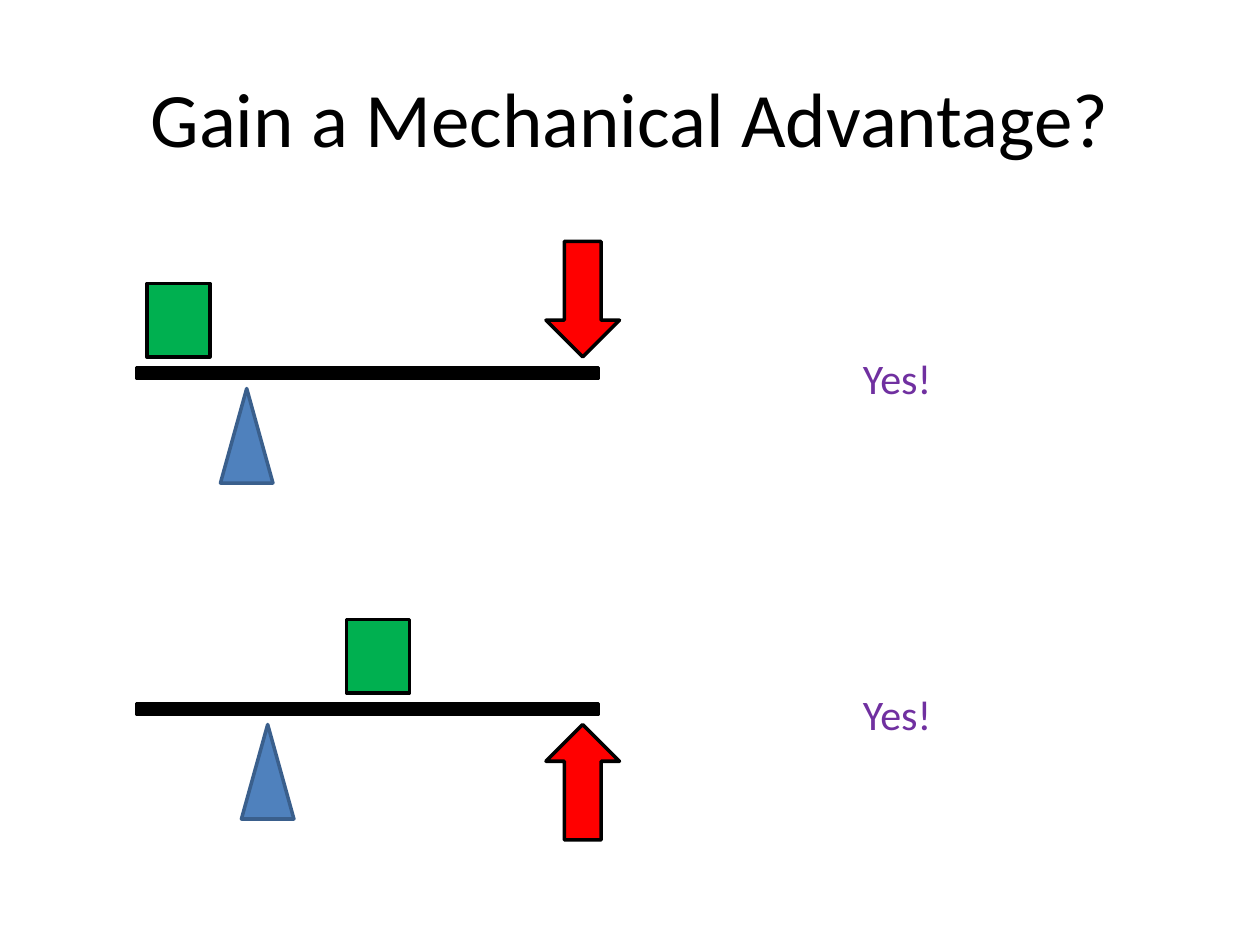
"""Builds a slide comparing the mechanical advantage of two levers."""
from pptx import Presentation
from pptx.dml.color import RGBColor
from pptx.enum.shapes import MSO_SHAPE
from pptx.enum.text import MSO_ANCHOR, MSO_AUTO_SIZE, PP_ALIGN
from pptx.util import Pt

BAR = MSO_SHAPE.RECTANGLE
TRIANGLE = MSO_SHAPE.ISOSCELES_TRIANGLE
ARROW = MSO_SHAPE.DOWN_ARROW
LEFT, CENTER = PP_ALIGN.LEFT, PP_ALIGN.CENTER
MIDDLE = MSO_ANCHOR.MIDDLE
FIT_SHAPE = MSO_AUTO_SIZE.SHAPE_TO_FIT_TEXT

COLORS = {
    "black": "000000",
    "fulcrum": "4F81BD",
    "fulcrum_edge": "3A5F8C",
    "effort": "FF0000",
    "load": "00B050",
    "answer": "7030A0",
}
LEVERS = [
    {"top": 210, "fulcrum_left": 126, "load_left": 84, "effort_up": False},
    {"top": 402, "fulcrum_left": 138, "load_left": 198, "effort_up": True},
]


def color(name):
    """Return the named colour."""
    return RGBColor.from_string(COLORS[name])


def write(frame, text, size, ink="black", align=LEFT, font="Calibri"):
    """Write one formatted paragraph into a text frame."""
    para = frame.paragraphs[0]
    para.alignment = align
    span = para.add_run()
    span.text = text
    span.font.name = font
    span.font.size = Pt(size)
    span.font.color.rgb = color(ink)


class LeverPage:
    """Holds the style and the current slide."""

    line_width = 2
    title_size = 44
    answer_size = 24
    gap = 6
    bar_height = 6

    def __init__(self, deck):
        """Add a title-only slide to the deck."""
        self.page = deck.slides.add_slide(deck.slide_layouts[5])

    def title(self, text, left, top, width, height):
        """Place and fill the title placeholder."""
        box = self.page.shapes.title
        box.left, box.top = Pt(left), Pt(top)
        box.width, box.height = Pt(width), Pt(height)
        box.text_frame.vertical_anchor = MIDDLE
        write(box.text_frame, text, self.title_size, align=CENTER)

    def shape(self, kind, left, top, width, height, fill, edge="black"):
        """Add a filled and outlined preset shape."""
        shape = self.page.shapes.add_shape(
            kind, Pt(left), Pt(top), Pt(width), Pt(height))
        shape.shadow.inherit = False
        shape.fill.solid()
        shape.fill.fore_color.rgb = color(fill)
        shape.line.color.rgb = color(edge)
        shape.line.width = Pt(self.line_width)
        return shape

    def answer(self, text, left, top, width, height):
        """Add an answer beside a lever."""
        box = self.page.shapes.add_textbox(
            Pt(left), Pt(top), Pt(width), Pt(height))
        box.text_frame.word_wrap = False
        box.text_frame.auto_size = FIT_SHAPE
        write(box.text_frame, text, self.answer_size, ink="answer")

    def lever(self, top, fulcrum_left, load_left, effort_up):
        """Draw a lever with its fulcrum, effort, load and answer."""
        above = top - self.gap
        below = top + self.bar_height + self.gap
        effort_height, load_height = 66, 42
        self.shape(BAR, 78, top, 264, self.bar_height, "black")
        self.shape(TRIANGLE, fulcrum_left, below, 30, 54,
                   "fulcrum", "fulcrum_edge")
        effort_top = below if effort_up else above - effort_height
        effort = self.shape(ARROW, 312, effort_top, 42, effort_height, "effort")
        effort.rotation = 180 if effort_up else 0
        self.shape(BAR, load_left, above - load_height, 36, load_height, "load")
        self.answer("Yes!", 486, top - 12, 54, 36)


def main():
    """Build and save the deck."""
    deck = Presentation()
    deck.slide_width, deck.slide_height = Pt(720), Pt(540)
    page = LeverPage(deck)
    page.title("Gain a Mechanical Advantage?", 36, 21.6, 648, 90)
    for lever in LEVERS:
        page.lever(**lever)
    deck.save("out.pptx")


if __name__ == "__main__":
    main()
